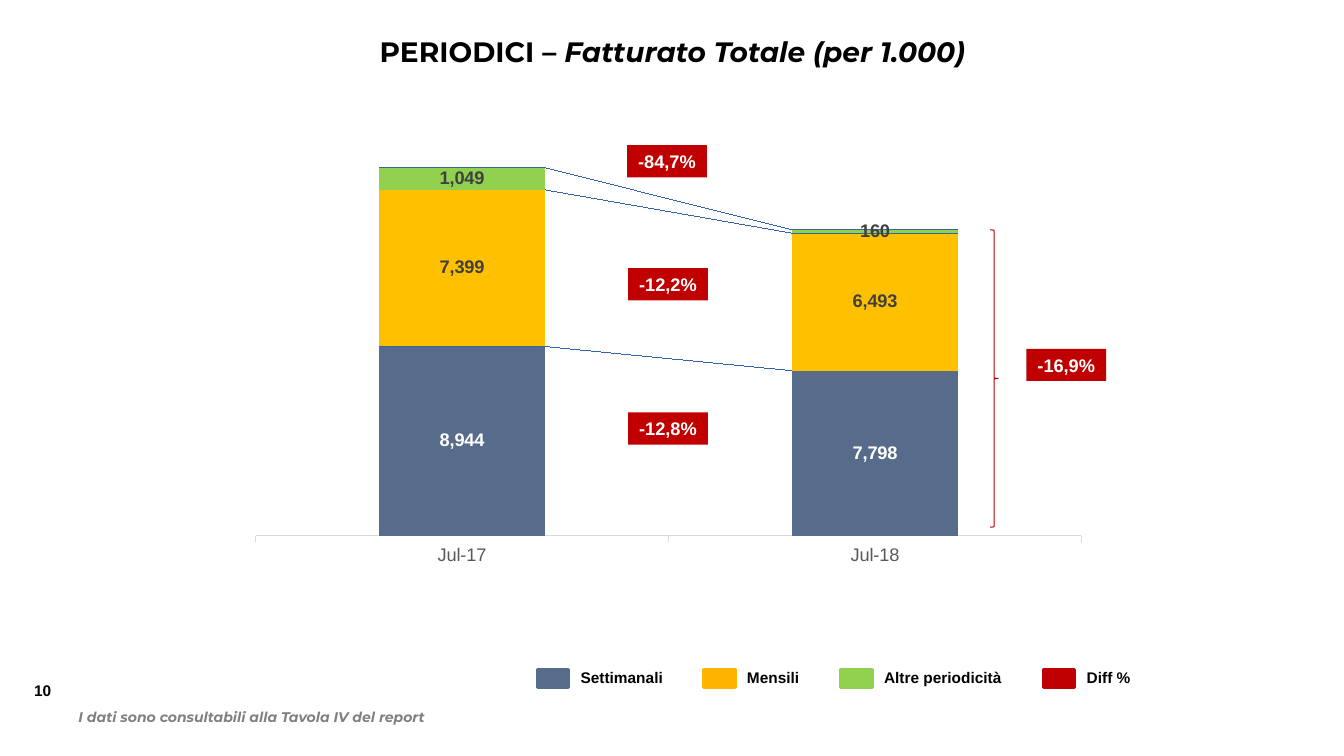
"""Build the slide on the total turnover of periodicals."""
from lxml import etree
from pptx import Presentation
from pptx.chart.data import CategoryChartData
from pptx.dml.color import RGBColor
from pptx.enum.chart import XL_CHART_TYPE, XL_LABEL_POSITION, XL_TICK_LABEL_POSITION, XL_TICK_MARK
from pptx.enum.shapes import MSO_SHAPE
from pptx.enum.text import MSO_ANCHOR, PP_ALIGN
from pptx.oxml import parse_xml
from pptx.oxml.ns import nsdecls, qn
from pptx.util import Inches, Pt

STACKED = XL_CHART_TYPE.COLUMN_STACKED
LABEL_CENTER = XL_LABEL_POSITION.CENTER
NO_LABELS = XL_TICK_LABEL_POSITION.NONE
TICK_NONE, TICK_OUT = XL_TICK_MARK.NONE, XL_TICK_MARK.OUTSIDE
RECT, BRACE = MSO_SHAPE.RECTANGLE, MSO_SHAPE.RIGHT_BRACE
MIDDLE, TOP = MSO_ANCHOR.MIDDLE, MSO_ANCHOR.TOP
LEFT, CENTER = PP_ALIGN.LEFT, PP_ALIGN.CENTER

COLORS = {
    "black": "000000", "white": "FFFFFF", "dark": "404040", "axis_text": "595959",
    "gray": "808080", "axis": "D9D9D9", "blue": "576B8A", "amber": "FFB400",
    "yellow": "FFC000", "green": "92D050", "red": "C00000", "link": "3A6EA5",
}
TITLE = {"name": "Montserrat", "size": Pt(20), "bold": True}
NOTE = {"name": "Montserrat", "size": Pt(10), "bold": True, "italic": True}
SMALL = {"name": "Arial", "size": Pt(11), "bold": True}
VALUE = {"name": "Arial", "size": Pt(13), "bold": True}
AXIS = {"name": "Arial", "size": Pt(13), "bold": False}

MONTHS = ["Jul-17", "Jul-18"]
SERIES = [
    ("Settimanali", (8944, 7798), "blue", "white"),
    ("Mensili", (7399, 6493), "yellow", "dark"),
    ("Altre periodicità", (1049, 160), "green", "dark"),
]
LEGEND = [
    ("Settimanali", 5.33, 1.14, "blue"),
    ("Mensili", 6.98, 0.81, "amber"),
    ("Altre periodicità", 8.34, 1.64, "green"),
    ("Diff %", 10.35, 0.71, "red"),
]
DIFFERENCES = [
    ("-16,9%", 10.18, 3.46), ("-84,7%", 6.22, 1.44),
    ("-12,2%", 6.23, 2.66), ("-12,8%", 6.23, 4.09),
]
PLOT = {"x": 0.095, "y": 0.037, "w": 0.88, "h": 0.799}


def rgb(color):
    """Return the named colour."""
    return RGBColor.from_string(COLORS[color])


def set_font(font, values, color):
    """Apply a dict of font values and a colour."""
    for name, value in values.items():
        setattr(font, name, value)
    font.color.rgb = rgb(color)


def add_run(p, text, values, color):
    """Append a formatted run to a paragraph."""
    r = p.add_run()
    r.text = text
    set_font(r.font, values, color)


def add_text(s, text, box, values, color="black", wrap=True):
    """Add a one-line text box."""
    tf = s.shapes.add_textbox(*map(Inches, box)).text_frame
    tf.word_wrap = wrap
    tf.vertical_anchor = TOP
    tf.paragraphs[0].alignment = LEFT
    add_run(tf.paragraphs[0], text, values, color)


def add_block(s, box, color, line_width=0):
    """Add a filled rectangle, outlined in its own colour if asked."""
    sp = s.shapes.add_shape(RECT, *map(Inches, box))
    sp.shadow.inherit = False
    sp.fill.solid()
    sp.fill.fore_color.rgb = rgb(color)
    if line_width:
        sp.line.color.rgb = rgb(color)
        sp.line.width = Pt(line_width)
    else:
        sp.line.fill.background()
    return sp


def add_title(s):
    """Fill and place the title placeholder."""
    sp = s.shapes.title
    sp.left, sp.top, sp.width, sp.height = map(Inches, (1.67, 0.29, 10, 0.44))
    tf = sp.text_frame
    tf.word_wrap = True
    tf.vertical_anchor = MIDDLE
    p = tf.paragraphs[0]
    p.alignment = CENTER
    p.space_before = Pt(0)
    add_run(p, "PERIODICI – ", TITLE, "black")
    add_run(p, "Fatturato Totale (per 1.000)", {**TITLE, "italic": True}, "black")


def add_legend_entry(s, text, left, width, color):
    """Add a swatch with its label."""
    add_text(s, text, (left + 0.33, 6.58, width, 0.29), SMALL)
    add_block(s, (left, 6.64, 0.31, 0.18), color, 2.25)


def add_difference(s, text, left, top):
    """Add a red tag with a percentage change."""
    tf = add_block(s, (left, top, 0.79, 0.32), "red").text_frame
    tf.word_wrap = True
    tf.vertical_anchor = MIDDLE
    tf.paragraphs[0].alignment = CENTER
    add_run(tf.paragraphs[0], text, VALUE, "white")


def add_brace(s):
    """Add the brace that spans the second column."""
    sp = s.shapes.add_shape(BRACE, *map(Inches, (9.82, 2.28, 0.08, 2.95)))
    sp.shadow.inherit = False
    sp.fill.background()
    sp.line.color.rgb = rgb("red")
    sp.line.width = Pt(0.75)


def format_axes(chart):
    """Style the category axis and hide the value axis."""
    cat, val = chart.category_axis, chart.value_axis
    cat.major_tick_mark = TICK_OUT
    cat.format.line.color.rgb = rgb("axis")
    cat.format.line.width = Pt(0.75)
    set_font(cat.tick_labels.font, AXIS, "axis_text")
    val.minimum_scale, val.maximum_scale = 0, 20000
    val.has_major_gridlines = False
    val.major_tick_mark = TICK_NONE
    val.tick_label_position = NO_LABELS
    val.format.line.fill.background()


def format_series(series, color, label_color):
    """Style one series and its value labels."""
    series.format.fill.solid()
    series.format.fill.fore_color.rgb = rgb(color)
    labels = series.data_labels
    labels.show_value = True
    labels.position = LABEL_CENTER
    labels.number_format = "#,##0"
    labels.number_format_is_linked = False
    set_font(labels.font, VALUE, label_color)


def add_series_lines(plot_xml):
    """Join the columns with series lines."""
    lines = parse_xml(
        f'<c:serLines {nsdecls("c", "a")}><c:spPr><a:ln w="9525"><a:solidFill>'
        f'<a:srgbClr val="{COLORS["link"]}"/></a:solidFill></a:ln></c:spPr></c:serLines>')
    plot_xml.find(qn("c:overlap")).addnext(lines)


def place_plot(plot_area):
    """Fix the inner plot area by fractions of the chart."""
    for old in plot_area.findall(qn("c:layout")):
        plot_area.remove(old)
    layout = etree.Element(qn("c:layout"))
    manual = etree.SubElement(layout, qn("c:manualLayout"))
    values = {"layoutTarget": "inner", "xMode": "edge", "yMode": "edge", **PLOT}
    for name, value in values.items():
        etree.SubElement(manual, qn(f"c:{name}")).set("val", str(value))
    plot_area.insert(0, layout)


def add_turnover_chart(s):
    """Add the stacked column chart."""
    data = CategoryChartData(number_format="#,##0")
    data.categories = MONTHS
    for name, values, _, _ in SERIES:
        data.add_series(name, values)
    box = map(Inches, (1.65, 0.92, 9.31, 5.26))
    chart = s.shapes.add_chart(STACKED, *box, data).chart
    chart.has_legend = chart.has_title = False
    set_font(chart.font, AXIS, "black")
    format_axes(chart)
    plot = chart.plots[0]
    plot.gap_width, plot.overlap, plot.vary_by_categories = 150, 100, False
    for series, (_, _, color, label_color) in zip(plot.series, SERIES):
        format_series(series, color, label_color)
    plot_area = chart.element.find(".//" + qn("c:plotArea"))
    place_plot(plot_area)
    add_series_lines(plot_area.find(qn("c:barChart")))


def main():
    """Build and save the slide."""
    prs = Presentation()
    prs.slide_width, prs.slide_height = Inches(13.33), Inches(7.5)
    s = prs.slides.add_slide(prs.slide_layouts[5])
    add_title(s)
    add_text(s, "10", (0.24, 6.71, 0.42, 0.29), SMALL, wrap=False)
    for entry in LEGEND:
        add_legend_entry(s, *entry)
    add_turnover_chart(s)
    add_brace(s)
    for difference in DIFFERENCES:
        add_difference(s, *difference)
    add_text(s, "I dati sono consultabili alla Tavola IV del report",
             (0.68, 6.98, 3.86, 0.27), NOTE, "gray")
    prs.save("out.pptx")


if __name__ == "__main__":
    main()
